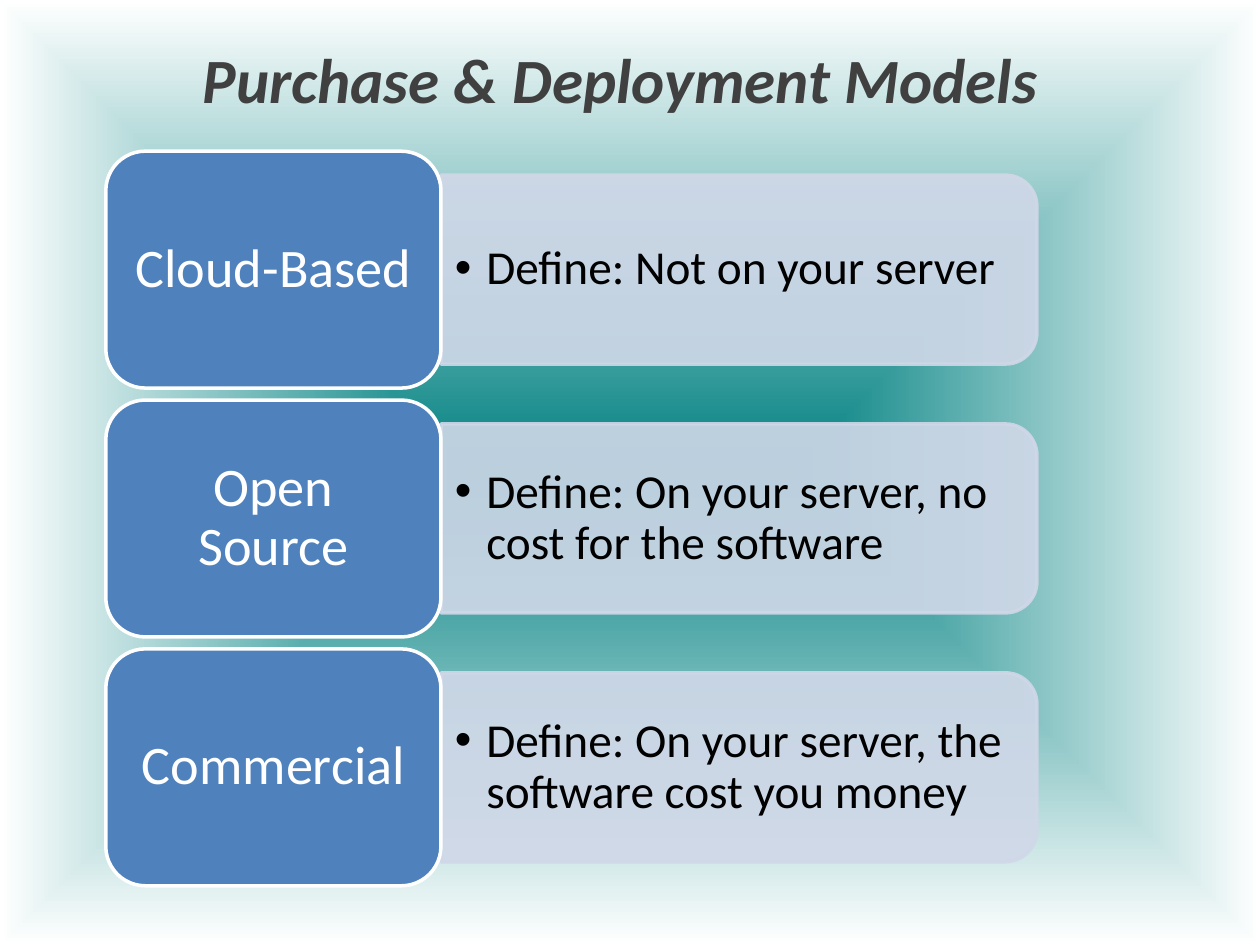
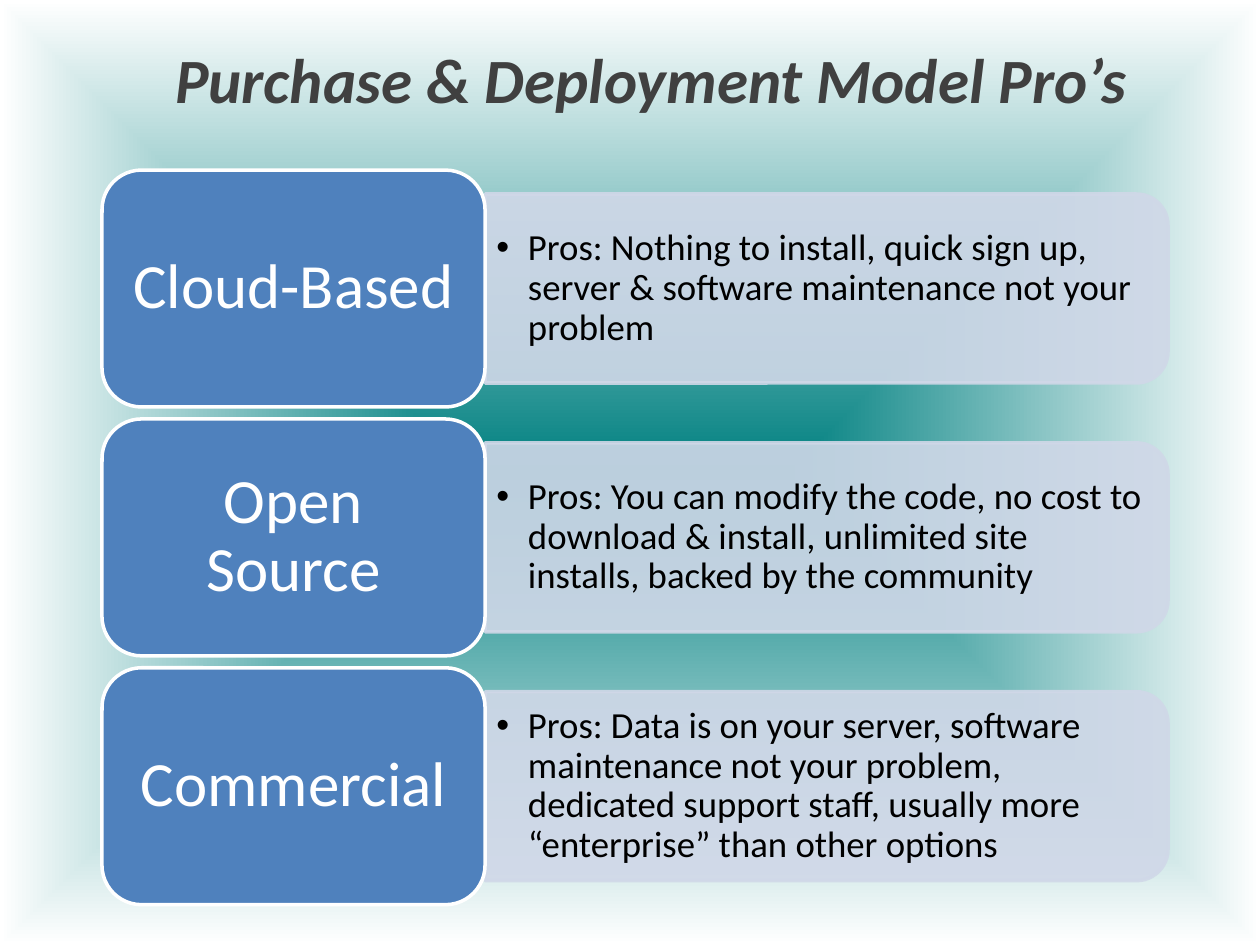
from lxml import etree
from pptx import Presentation
from pptx.dml.color import RGBColor
from pptx.enum.shapes import MSO_SHAPE
from pptx.enum.text import MSO_ANCHOR, MSO_AUTO_SIZE, PP_ALIGN
from pptx.oxml.ns import qn
from pptx.util import Inches, Pt

ROUNDED = MSO_SHAPE.ROUNDED_RECTANGLE
ROUNDED_TOP = MSO_SHAPE.ROUND_2_SAME_RECTANGLE
MIDDLE = MSO_ANCHOR.MIDDLE
NO_FIT = MSO_AUTO_SIZE.NONE
LEFT, CENTER = PP_ALIGN.LEFT, PP_ALIGN.CENTER

COLORS = {
    "glow": "008080",
    "edge": "FFFFFF",
    "title": "404040",
    "label": "4F81BD",
    "label_text": "FFFFFF",
    "panel": "D0D8E8",
    "panel_text": "000000",
}
FONT = "Calibri"
SLIDE_COLUMNS, SLIDE_ROWS = 100, 75
ROW_PITCH, LABEL_ROWS, PANEL_ROWS = 19.75, 18.8, 15
PANEL_TEXT_ROWS, PANEL_TEXT_TRIM = 13.6, 0.7
INDENT = Inches(0.25)

MODELS = ["Cloud-Based", "Open Source", "Commercial"]
SLIDES = [
    {
        "title": "Purchase & Deployment Models",
        "title_span": (15.1, 73.9),
        "top": 12, "left": 8.4, "label_columns": 26.6, "panel_columns": 47.3,
        "label_size": 31, "label_inset": (0.13, 0.06),
        "panel_size": 27, "panel_inset": (0.11, 0.06),
        "details": [
            "Define: Not on your server",
            "Define: On your server, no cost for the software",
            "Define: On your server, the software cost you money",
        ],
    },
    {
        "title": "Purchase & Deployment Model Pro’s",
        "title_span": (12.9, 81.4),
        "top": 13.5, "left": 8.1, "label_columns": 30.4, "panel_columns": 54.2,
        "label_size": 36, "label_inset": (0.15, 0.07),
        "panel_size": 21, "panel_inset": (0.09, 0.04),
        "details": [
            "Pros: Nothing to install, quick sign up, server & software "
            "maintenance not your problem",
            "Pros: You can modify the code, no cost to download & install, "
            "unlimited site installs, backed by the community",
            "Pros: Data is on your server, software maintenance not your problem, "
            "dedicated support staff, usually more “enterprise” than other options",
        ],
    },
]


def assign(target, values):
    for name, value in values.items():
        setattr(target, name, value)


def color(name):
    return RGBColor.from_string(COLORS[name])


class DeckBuilder:
    def __init__(self):
        self.deck = Presentation()
        assign(self.deck, {"slide_width": Inches(10), "slide_height": Inches(7.5)})
        self.column = self.deck.slide_width / SLIDE_COLUMNS
        self.row = self.deck.slide_height / SLIDE_ROWS
        self.page = None
        self.background()

    def background(self):
        master = self.deck.slide_master
        fill = master.background.fill
        fill.gradient()
        for stop, name, position in zip(fill.gradient_stops, ("glow", "edge"), (0, 1)):
            stop.color.rgb = color(name)
            stop.position = position
        gradient = master.element.find(".//" + qn("p:bgPr")).find(qn("a:gradFill"))
        gradient.remove(gradient.find(qn("a:lin")))
        shade = etree.SubElement(gradient, qn("a:path"), {"path": "shape"})
        sides = dict.fromkeys("ltrb", "50000")
        etree.SubElement(shade, qn("a:fillToRect"), sides)

    def area(self, left, top, width, height):
        return [round(length) for length in (
            left * self.column, top * self.row, width * self.column, height * self.row)]

    def add_page(self, title, title_span):
        self.page = self.deck.slides.add_slide(self.deck.slide_layouts[5])
        box = self.page.shapes.title
        left, width = title_span
        places = self.area(left, 0, width, 12.5)
        assign(box, dict(zip(("left", "top", "width", "height"), places)))
        self.set_text(box, title, LEFT, 36, "title", (0.1, 0.05), bold=True, italic=True)

    def set_text(self, box, text, align, size, ink, inset, spacing=1.0, **style):
        across, down = (Inches(length) for length in inset)
        frame = box.text_frame
        assign(frame, {
            "word_wrap": True, "auto_size": NO_FIT, "vertical_anchor": MIDDLE,
            "margin_left": across, "margin_right": across,
            "margin_top": down, "margin_bottom": down,
        })
        para = frame.paragraphs[0]
        assign(para, {"alignment": align, "line_spacing": spacing})
        span = para.add_run()
        span.text = text
        assign(span.font, {"name": FONT, "size": Pt(size), **style})
        span.font.color.rgb = color(ink)
        return para

    def shape(self, kind, places, fill, line):
        box = self.page.shapes.add_shape(kind, *places)
        box.shadow.inherit = False
        box.fill.solid()
        box.fill.fore_color.rgb = color(fill)
        box.line.color.rgb = color(line)
        box.line.width = Pt(2)
        return box

    def panel(self, left, middle, width):
        upright_left = left + (width - PANEL_ROWS) / 2
        places = self.area(upright_left, middle - width / 2, PANEL_ROWS, width)
        box = self.shape(ROUNDED_TOP, places, "panel", "panel")
        box.rotation = 90
        for tint in box.element.spPr.iter(qn("a:srgbClr")):
            etree.SubElement(tint, qn("a:alpha"), val="90000")

    def bullet(self, left, middle, width, text, size, inset):
        places = self.area(left, middle - PANEL_TEXT_ROWS / 2,
                           width - PANEL_TEXT_TRIM, PANEL_TEXT_ROWS)
        box = self.page.shapes.add_textbox(*places)
        para = self.set_text(box, text, LEFT, size, "panel_text", inset, 0.9)
        settings = para._p.get_or_add_pPr()
        settings.set("marL", str(INDENT))
        settings.set("indent", str(-INDENT))
        etree.SubElement(settings, qn("a:buFont"), typeface="Arial")
        etree.SubElement(settings, qn("a:buChar"), char="•")

    def label(self, left, middle, width, text, size, inset):
        places = self.area(left, middle - LABEL_ROWS / 2, width, LABEL_ROWS)
        box = self.shape(ROUNDED, places, "label", "edge")
        self.set_text(box, text, CENTER, size, "label_text", inset, 0.9)

    def model_list(self, content):
        left, label_width = content["left"], content["label_columns"]
        panel_left, panel_width = left + label_width, content["panel_columns"]
        for index, (model, detail) in enumerate(zip(MODELS, content["details"])):
            middle = content["top"] + LABEL_ROWS / 2 + index * ROW_PITCH
            self.panel(panel_left, middle, panel_width)
            self.bullet(panel_left, middle, panel_width, detail,
                        content["panel_size"], content["panel_inset"])
            self.label(left, middle, label_width, model,
                       content["label_size"], content["label_inset"])


def main():
    builder = DeckBuilder()
    for content in SLIDES:
        builder.add_page(content["title"], content["title_span"])
        builder.model_list(content)
    builder.deck.save("out.pptx")


if __name__ == "__main__":
    main()
